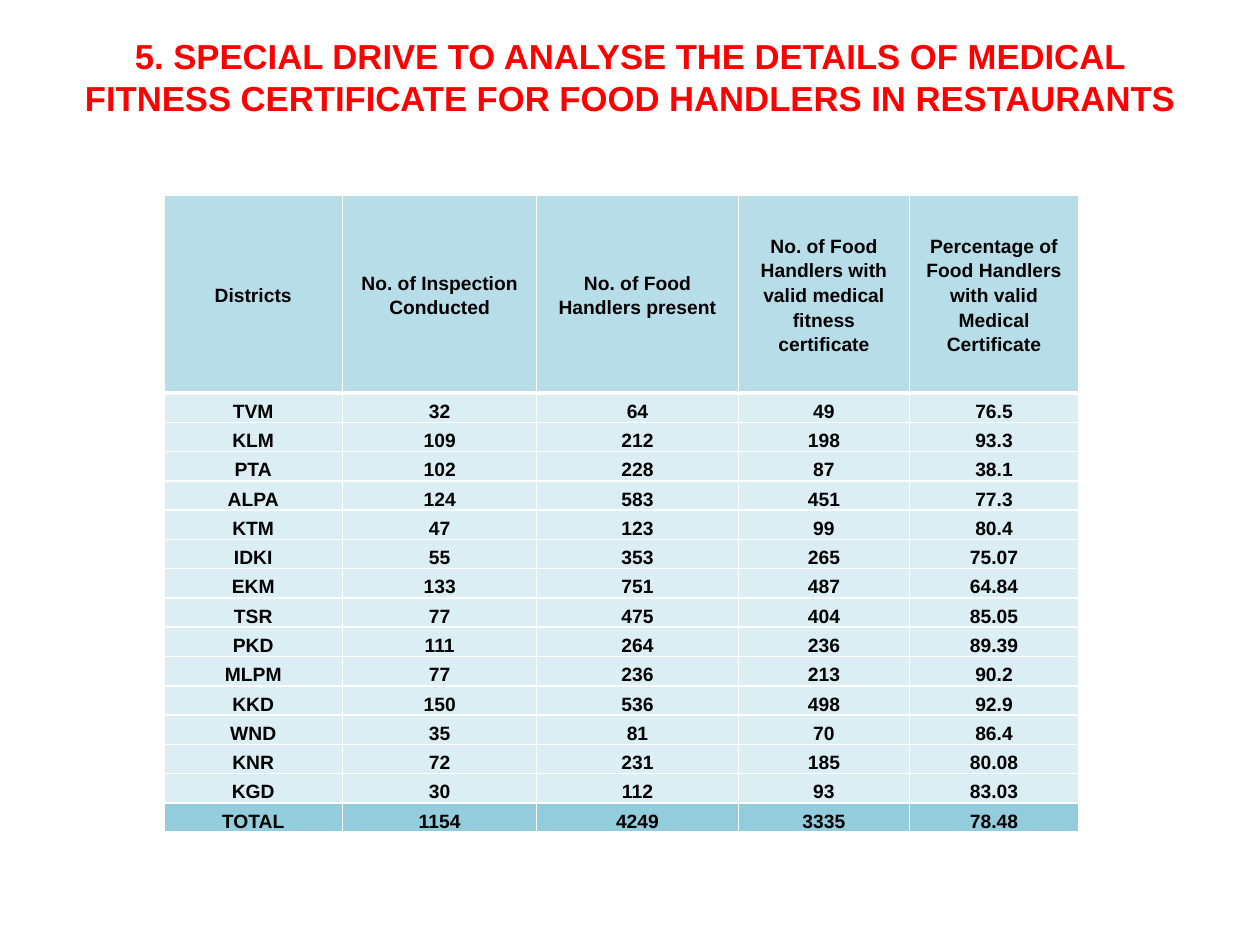
from lxml import etree
from pptx import Presentation
from pptx.dml.color import RGBColor
from pptx.enum.text import MSO_ANCHOR, MSO_AUTO_SIZE, PP_ALIGN
from pptx.oxml.ns import qn
from pptx.util import Inches, Pt

CENTER = PP_ALIGN.CENTER
MIDDLE, BOTTOM = MSO_ANCHOR.MIDDLE, MSO_ANCHOR.BOTTOM
NO_AUTOFIT = MSO_AUTO_SIZE.NONE
RED = RGBColor(0xFF, 0x00, 0x00)
BLACK = RGBColor(0x00, 0x00, 0x00)
WHITE = RGBColor(0xFF, 0xFF, 0xFF)
HEADER_BLUE = RGBColor(0xB7, 0xDE, 0xE8)
BODY_BLUE = RGBColor(0xDB, 0xEE, 0xF4)
TOTAL_BLUE = RGBColor(0x93, 0xCD, 0xDD)

TITLE = ("5. SPECIAL DRIVE TO ANALYSE THE DETAILS OF MEDICAL "
         "FITNESS CERTIFICATE FOR FOOD HANDLERS IN RESTAURANTS")
COLUMN_WIDTHS = [1.42, 1.54, 1.6, 1.36, 1.34]
HEADER_HEIGHT = 1.57
BODY_HEIGHT = 3.49
ROWS = [
    ("Districts", "No. of Inspection Conducted", "No. of Food Handlers present",
     "No. of Food Handlers with valid medical fitness certificate",
     "Percentage of Food Handlers with valid Medical Certificate"),
    ("TVM", "32", "64", "49", "76.5"),
    ("KLM", "109", "212", "198", "93.3"),
    ("PTA", "102", "228", "87", "38.1"),
    ("ALPA", "124", "583", "451", "77.3"),
    ("KTM", "47", "123", "99", "80.4"),
    ("IDKI", "55", "353", "265", "75.07"),
    ("EKM", "133", "751", "487", "64.84"),
    ("TSR", "77", "475", "404", "85.05"),
    ("PKD", "111", "264", "236", "89.39"),
    ("MLPM", "77", "236", "213", "90.2"),
    ("KKD", "150", "536", "498", "92.9"),
    ("WND", "35", "81", "70", "86.4"),
    ("KNR", "72", "231", "185", "80.08"),
    ("KGD", "30", "112", "93", "83.03"),
    ("TOTAL", "1154", "4249", "3335", "78.48"),
]


def apply(target, values):
    for name, value in values.items():
        setattr(target, name, value)


class PageBuilder:
    font_name = "Arial"

    def __init__(self, page):
        self.page = page

    def text(self, frame, words, size, color, **para_format):
        para = frame.paragraphs[0]
        apply(para, {"alignment": CENTER, **para_format})
        span = para.add_run()
        span.text = words
        apply(span.font, {"name": self.font_name, "size": Pt(size), "bold": True})
        span.font.color.rgb = color

    def title(self, words, left, top, width, height):
        box = self.page.shapes.title
        apply(box, {"left": Inches(left), "top": Inches(top),
                    "width": Inches(width), "height": Inches(height)})
        apply(box.text_frame, {"vertical_anchor": MIDDLE, "word_wrap": True,
                               "auto_size": NO_AUTOFIT, "margin_top": 0,
                               "margin_bottom": Inches(0.63)})
        self.text(box.text_frame, words, 19.8, RED)

    def borders(self, cell, widths):
        properties = cell._tc.get_or_add_tcPr()
        for index, (side, width) in enumerate(widths.items()):
            line = etree.Element(qn(f"a:ln{side}"), w=str(Pt(width)))
            fill = etree.SubElement(line, qn("a:solidFill"))
            etree.SubElement(fill, qn("a:srgbClr"), val=str(WHITE))
            properties.insert(index, line)

    def table(self, rows, left, top):
        last = len(rows) - 1
        grid = self.page.shapes.add_table(
            len(rows), len(COLUMN_WIDTHS), Inches(left), Inches(top),
            Inches(sum(COLUMN_WIDTHS)), Inches(HEADER_HEIGHT + BODY_HEIGHT)).table
        for column, width in zip(grid.columns, COLUMN_WIDTHS):
            column.width = Inches(width)
        for number, texts in enumerate(rows):
            header = number == 0
            grid.rows[number].height = Inches(HEADER_HEIGHT if header else BODY_HEIGHT / last)
            color = HEADER_BLUE if header else TOTAL_BLUE if number == last else BODY_BLUE
            widths = {"L": 1, "R": 1, "T": 3 if number == 1 else 1, "B": 3 if header else 1}
            for cell, words in zip(grid.rows[number].cells, texts):
                apply(cell, {"margin_left": Inches(0.07), "margin_right": Inches(0.07),
                             "margin_top": 0, "margin_bottom": 0,
                             "vertical_anchor": MIDDLE if header else BOTTOM})
                cell.fill.solid()
                cell.fill.fore_color.rgb = color
                self.borders(cell, widths)
                self.text(cell.text_frame, words, 11, BLACK, line_spacing=1.15)


def main():
    deck = Presentation()
    apply(deck, {"slide_width": Inches(10), "slide_height": Inches(7.5)})
    builder = PageBuilder(deck.slides.add_slide(deck.slide_layouts[5]))
    builder.title(TITLE, 0.5, 0.3, 9, 1.25)
    builder.table(ROWS, 1.3, 1.55)
    deck.save("out.pptx")


if __name__ == "__main__":
    main()
